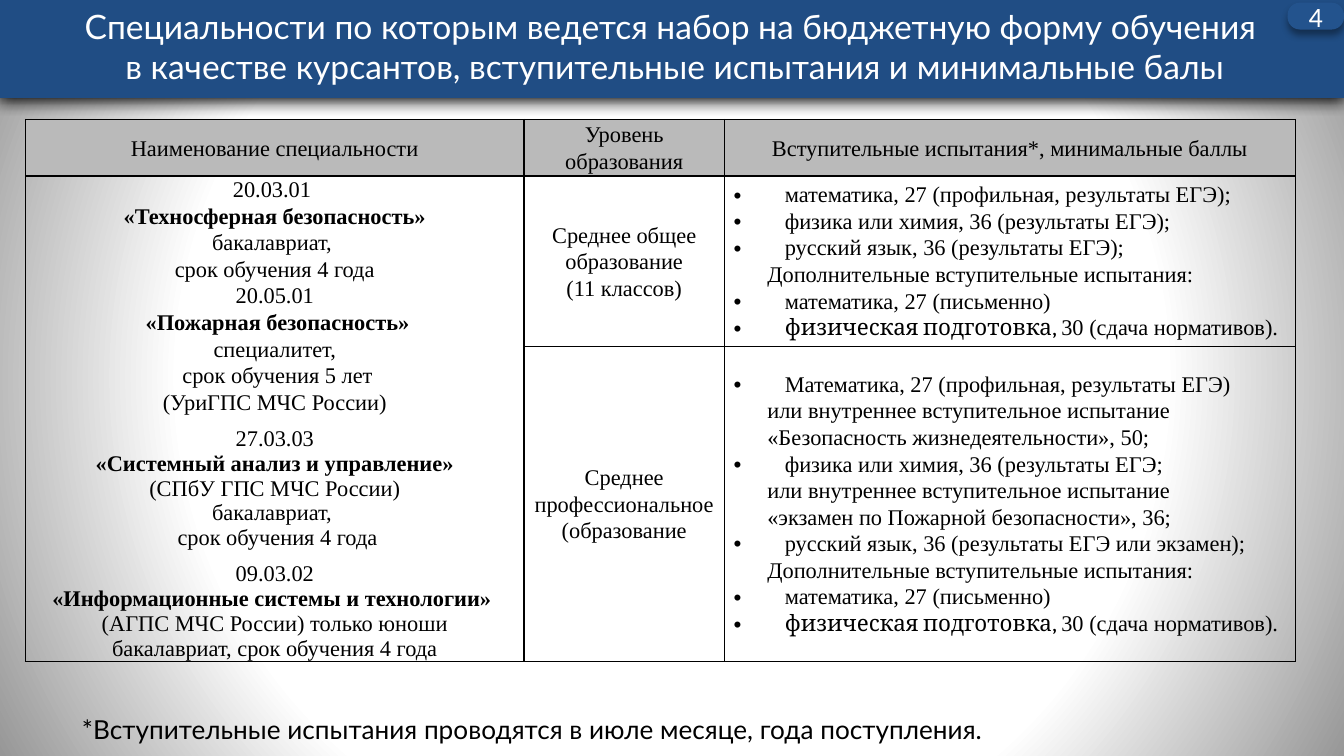
import pptx
import pptx.util
import pptx.dml.color
import pptx.enum.shapes
import pptx.enum.text
import pptx.oxml
import pptx.oxml.ns

Inches, Pt = pptx.util.Inches, pptx.util.Pt
ALIGN = pptx.enum.text.PP_ALIGN
MIDDLE = pptx.enum.text.MSO_ANCHOR.MIDDLE
SHAPE = pptx.enum.shapes.MSO_SHAPE
NS = pptx.oxml.ns.nsdecls("a")

# Content
HEADING = ["Специальности по которым ведется набор на бюджетную форму обучения",
           " в качестве курсантов, вступительные испытания и минимальные балы"]
PAGE = "4"
FOOTNOTE = "*Вступительные испытания проводятся в июле месяце, года поступления."
COLUMNS = ["Наименование специальности", "Уровень образования",
           "Вступительные испытания*, минимальные баллы"]
# Each group: line spacing, then its lines; lines with « are bold
SPECIALTIES = [
    (1.07, ["20.03.01 ", "«Техносферная безопасность»", "бакалавриат, ",
            "срок обучения 4 года", "20.05.01", " «Пожарная безопасность»",
            "специалитет,", " срок обучения 5 лет", "(УриГПС МЧС России)"]),
    (1.0, ["27.03.03", "«Системный анализ и управление»", "(СПбУ ГПС МЧС России)",
           "бакалавриат, ", " срок обучения 4 года"]),
    (1.0, ["09.03.02", "«Информационные системы и технологии» ",
           "(АГПС МЧС России) только юноши", "бакалавриат, срок обучения 4 года"]),
]
LEVELS = [["Среднее общее образование", "(11 классов)"],
          ["Среднее профессиональное (образование"]]
# Exam lines: (bulleted, text)
EXTRA = [(False, "Дополнительные вступительные испытания:"),
         (True, "математика, 27 (письменно)")]
FITNESS = [("физическая подготовка, ", "Cambria"),
           ("30 (сдача нормативов).", "Times New Roman")]
EXAMS = [
    [(True, "математика, 27 (профильная, результаты ЕГЭ);"),
     (True, "физика или химия, 36 (результаты ЕГЭ);"),
     (True, "русский язык, 36 (результаты ЕГЭ);")],
    [(True, "Математика, 27 (профильная, результаты ЕГЭ)"),
     (False, "или внутреннее вступительное испытание"),
     (False, "«Безопасность жизнедеятельности», 50;"),
     (True, "физика или химия, 36 (результаты ЕГЭ;"),
     (False, "или внутреннее вступительное испытание"),
     (False, "«экзамен по Пожарной безопасности», 36;"),
     (True, "русский язык, 36 (результаты ЕГЭ или экзамен);")],
]
COL_WIDTHS = [3.71, 1.49, 4.25]
ROW_HEIGHTS = [0.42, 1.27, 2.33]


def rgb(value):
    return pptx.dml.color.RGBColor.from_string(value)


def add_run(p, text, size=12, font="Times New Roman", color="000000", bold=False):
    r = p.add_run()
    r.text = text
    r.font.size, r.font.name, r.font.bold = Pt(size), font, bold
    r.font.color.rgb = rgb(color)


def paragraphs(tf):
    """Yield the frame's first paragraph, then new ones."""
    yield tf.paragraphs[0]
    while True:
        yield tf.add_paragraph()


def set_margins(target, x, y):
    target.margin_left = target.margin_right = Inches(x)
    target.margin_top = target.margin_bottom = Inches(y)


def add_block(s, kind, box, color, shadow, lines, size, font, wrap=True):
    sp = s.shapes.add_shape(kind, *map(Inches, box))
    sp.fill.solid()
    sp.fill.fore_color.rgb = rgb(color)
    sp.line.fill.background()
    blur, dist, alpha = shadow
    sp._element.spPr.append(pptx.oxml.parse_xml(
        f'<a:effectLst {NS}><a:outerShdw blurRad="{Pt(blur)}" dist="{Pt(dist)}" '
        f'dir="5400000" rotWithShape="0"><a:srgbClr val="000000">'
        f'<a:alpha val="{alpha * 1000}"/></a:srgbClr></a:outerShdw></a:effectLst>'))
    tf = sp.text_frame
    tf.word_wrap, tf.vertical_anchor = wrap, MIDDLE
    set_margins(tf, 0.08, 0.04)
    # Lines come first so that no spare paragraph is drawn from the generator
    for line, p in zip(lines, paragraphs(tf)):
        p.alignment = ALIGN.CENTER
        add_run(p, line, size, font, "FFFFFF")
    return sp


def style_cell(cell, fill=None):
    cell.vertical_anchor = MIDDLE
    set_margins(cell, 0.07, 0)
    tcPr = cell._tc.get_or_add_tcPr()
    for side in ("lnL", "lnR", "lnT", "lnB"):
        tcPr.append(pptx.oxml.parse_xml(
            f'<a:{side} {NS} w="{Pt(1)}"><a:solidFill><a:srgbClr val="000000"/>'
            f'</a:solidFill></a:{side}>'))
    if fill:
        cell.fill.solid()
        cell.fill.fore_color.rgb = rgb(fill)
    else:
        cell.fill.background()


def write_centred(cell, lines):
    p = cell.text_frame.paragraphs[0]
    p.alignment, p.line_spacing = ALIGN.CENTER, 1.07
    for i, line in enumerate(lines):
        if i:
            p.add_line_break()
        add_run(p, line)


def write_specialties(cell):
    new = paragraphs(cell.text_frame)
    for g, (spacing, lines) in enumerate(SPECIALTIES):
        for i, line in enumerate(lines):
            p = next(new)
            p.alignment, p.line_spacing = ALIGN.CENTER, spacing
            if g and not i:
                p.space_before = Pt(6)
            add_run(p, line, bold="«" in line)


def write_exams(cell, exams):
    lines = [(b, [(text, "Times New Roman")]) for b, text in exams + EXTRA]
    for (bulleted, runs), p in zip(lines + [(True, FITNESS)], paragraphs(cell.text_frame)):
        p.alignment, p.line_spacing = ALIGN.LEFT, 1.07
        pPr = p._p.get_or_add_pPr()
        pPr.set("marL", str(Inches(0.38 if bulleted else 0.25)))
        pPr.set("indent", str(-Inches(0.38) if bulleted else 0))
        if bulleted:
            pPr.append(pptx.oxml.parse_xml(f'<a:buFont {NS} typeface="Arial"/>'))
            pPr.append(pptx.oxml.parse_xml(f'<a:buChar {NS} char="•"/>'))
        for text, font in runs:
            add_run(p, text, font=font)


# Widescreen slide, 16:9
prs = pptx.Presentation()
prs.slide_width = Inches(10)
prs.slide_height = prs.slide_width * 9 // 16
s = prs.slides.add_slide(prs.slide_layouts[5])

# Background: white centre fading to grey edges
s.background.fill.solid()
solid = s._element.find(".//" + pptx.oxml.ns.qn("p:bgPr"))[0]
solid.getparent().replace(solid, pptx.oxml.parse_xml(
    f'<a:gradFill {NS} rotWithShape="1"><a:gsLst>'
    '<a:gs pos="64000"><a:srgbClr val="FFFFFF"/></a:gs>'
    '<a:gs pos="100000"><a:srgbClr val="979797"><a:alpha val="61000"/></a:srgbClr></a:gs>'
    '</a:gsLst><a:path path="circle">'
    '<a:fillToRect l="50000" t="50000" r="50000" b="50000"/></a:path></a:gradFill>'))

# Heading band and page number
add_block(s, SHAPE.RECTANGLE, (-0.02, -0.04, 10.02, 0.77), "204D84",
          (8.5, 1, 100), HEADING, 18, "Lato")
badge = add_block(s, SHAPE.ROUNDED_RECTANGLE, (9.58, 0.02, 0.42, 0.2), "23538D",
                  (4, 3, 40), [PAGE], 15, "Calibri", wrap=False)
badge.adjustments[0] = 0.46

# Table
table = s.shapes.add_table(len(ROW_HEIGHTS), len(COL_WIDTHS), Inches(0.19), Inches(0.89),
                           Inches(sum(COL_WIDTHS)), Inches(sum(ROW_HEIGHTS))).table
table.first_row = table.horz_banding = False
for col, width in zip(table.columns, COL_WIDTHS):
    col.width = Inches(width)
for i, (row, height) in enumerate(zip(table.rows, ROW_HEIGHTS)):
    row.height = Inches(height)
    for cell in row.cells:
        style_cell(cell, None if i else "BABABA")
table.cell(1, 0).merge(table.cell(2, 0))
for c, text in enumerate(COLUMNS):
    write_centred(table.cell(0, c), [text])
write_specialties(table.cell(1, 0))
for i, (level, exams) in enumerate(zip(LEVELS, EXAMS), start=1):
    write_centred(table.cell(i, 1), level)
    write_exams(table.cell(i, 2), exams)

# Footnote in the title placeholder
title = s.shapes.title
title.left, title.top, title.width, title.height = map(Inches, (0.53, 5.19, 9.18, 0.47))
tf = title.text_frame
tf.word_wrap, tf.vertical_anchor = True, MIDDLE
tf.auto_size = pptx.enum.text.MSO_AUTO_SIZE.NONE
set_margins(tf, 0.08, 0.04)
tf.paragraphs[0].alignment = ALIGN.LEFT
add_run(tf.paragraphs[0], FOOTNOTE, 14, "Lato")

prs.save("out.pptx")
